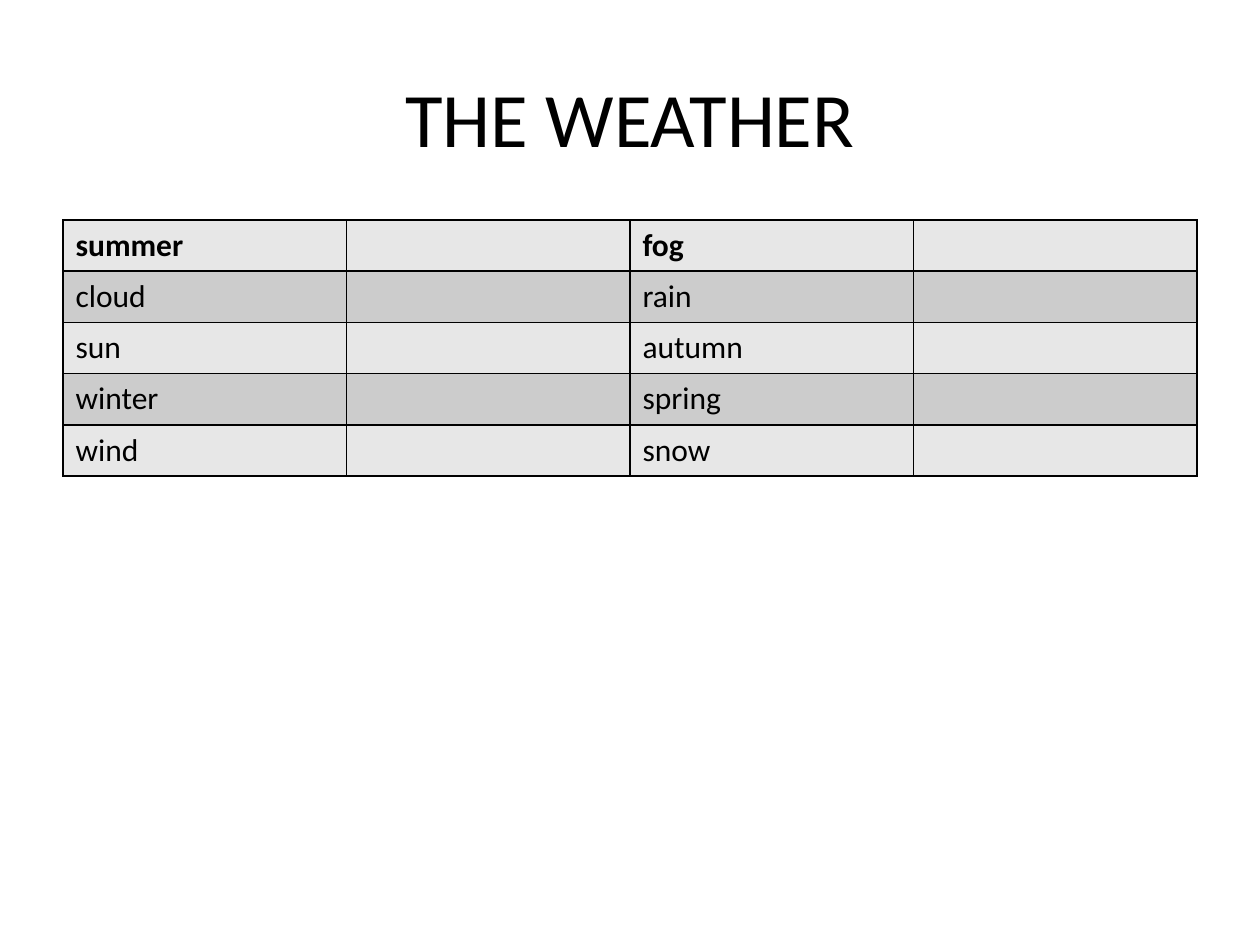
from lxml.etree import SubElement as Sub
from pptx import Presentation
from pptx.dml.color import RGBColor
from pptx.enum.text import MSO_ANCHOR as Anchor, PP_ALIGN as Align
from pptx.oxml.ns import qn
from pptx.util import Pt

PX = 914400 // 126  # EMU in one px
BLACK = "000000"
BANDS = ["E7E7E7", "CCCCCC"]


def write(frame, text, size=18, bold=False, color=BLACK, align=Align.LEFT):
    par = frame.paragraphs[0]
    par.text = text
    par.alignment = align
    font = par.font
    font.name, font.size, font.bold = "Calibri", Pt(size), bold
    font.color.rgb = RGBColor.from_string(color)


def border(cell, color=BLACK, width=1):
    """Draw all four sides; lines must come before the fill in tcPr."""
    props = cell._tc.get_or_add_tcPr()
    for side in ("a:lnL", "a:lnR", "a:lnT", "a:lnB"):
        line = Sub(props, qn(side), w=str(Pt(width)))
        fill = Sub(line, qn("a:solidFill"))
        Sub(fill, qn("a:srgbClr"), val=color)


deck = Presentation()
deck.slide_width, deck.slide_height = 1260 * PX, 945 * PX
slide = deck.slides.add_slide(deck.slide_layouts[5])

title = slide.shapes.title
title.left, title.top = 63 * PX, 38 * PX
title.width, title.height = 1134 * PX, 157 * PX
title.text_frame.vertical_anchor = Anchor.MIDDLE
write(title.text_frame, "THE WEATHER", size=44, align=Align.CENTER)

words = [
    ("summer", "", "fog", ""),
    ("cloud", "", "rain", ""),
    ("sun", "", "autumn", ""),
    ("winter", "", "spring", ""),
    ("wind", "", "snow", ""),
]
table = slide.shapes.add_table(
    len(words), 4, 63 * PX, 220 * PX, 1134 * PX, 256 * PX).table
for r, row in enumerate(words):
    for c, word in enumerate(row):
        cell = table.cell(r, c)
        border(cell)
        cell.fill.solid()
        cell.fill.fore_color.rgb = RGBColor.from_string(BANDS[r % 2])
        write(cell.text_frame, word, bold=r == 0)

deck.save("out.pptx")
